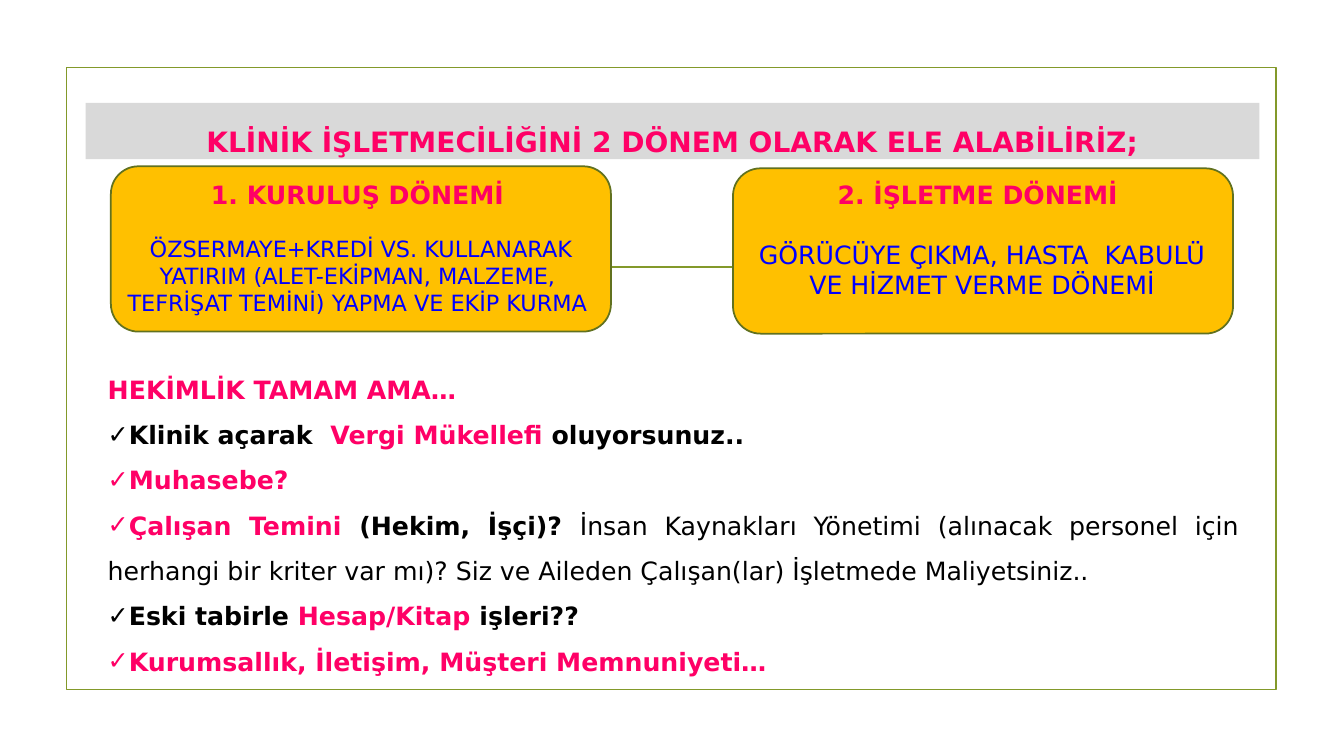
from dataclasses import dataclass
from lxml.etree import SubElement
from pptx import Presentation
from pptx.dml.color import RGBColor
from pptx.enum.shapes import MSO_CONNECTOR as Connector, MSO_SHAPE as Shape
from pptx.enum.text import MSO_ANCHOR as Anchor, PP_ALIGN as Align
from pptx.oxml.ns import qn
from pptx.util import Inches, Pt


@dataclass(frozen=True)
class Theme:
    font: str = "DejaVu Sans"
    pink: str = "FF0066"
    blue: str = "0000FF"
    black: str = "000000"
    band: str = "D9D9D9"
    card: str = "FFC000"
    card_edge: str = "61711F"
    olive: str = "83992A"
    line: float = 1.25
    title: int = 20
    body: int = 18
    small: int = 16


THEME = Theme()
PINK = (THEME.pink, True)
BLACK = (THEME.black, True)
PLAIN = (THEME.black, False)
BLUE = (THEME.blue, False)

TITLE = "KLİNİK İŞLETMECİLİĞİNİ 2 DÖNEM OLARAK ELE ALABİLİRİZ;"
# card position, text area, heading, description, description size
PERIODS = [
    ((1.1, 1.65), (0.97, 1.73, 5.15, 1.48), "1. KURULUŞ DÖNEMİ",
     " ÖZSERMAYE+KREDİ VS. KULLANARAK YATIRIM (ALET-EKİPMAN, MALZEME, "
     "TEFRİŞAT TEMİNİ) YAPMA VE EKİP KURMA", THEME.small),
    ((7.27, 1.67), (7.33, 1.73, 4.82, 1.31), "2. İŞLETME DÖNEMİ ",
     "GÖRÜCÜYE ÇIKMA, HASTA  KABULÜ VE HİZMET VERME DÖNEMİ", THEME.body),
]
LEAD = "HEKİMLİK TAMAM AMA…"
CHECKS = [
    [("Klinik açarak  ", BLACK), ("Vergi Mükellefi", PINK), (" oluyorsunuz..", BLACK)],
    [("Muhasebe?", PINK)],
    [("Çalışan Temini ", PINK), ("(Hekim, İşçi)? ", BLACK),
     ("İnsan Kaynakları Yönetimi (alınacak personel için herhangi bir kriter "
      "var mı)? Siz ve Aileden Çalışan(lar) İşletmede Maliyetsiniz..", PLAIN)],
    [("Eski tabirle ", BLACK), ("Hesap/Kitap ", PINK), ("işleri??", BLACK)],
    [("Kurumsallık, İletişim, Müşteri Memnuniyeti…", PINK)],
]

WIDTH, HEIGHT = 13.33, 7.5
FRAME = (0.66, 0.67, 12, 6.17)
BAND = (0.85, 1.02, 11.64, 0.56)
CARD_SIZE = (4.96, 1.64)
LINK = (1.53, 2.65, 11.81, 2.65)
LIST = (0.97, 3.51, 11.42, 3.28)
LINE_HEIGHT = 1.164  # natural line height of the font, in ems


def inches(values):
    return [Inches(value) for value in values]


def add_panel(page, kind, area, fill=None, edge=None):
    panel = page.shapes.add_shape(kind, *inches(area))
    panel.shadow.inherit = False
    if fill:
        panel.fill.solid()
        panel.fill.fore_color.rgb = RGBColor.from_string(fill)
    else:
        panel.fill.background()
    if edge:
        panel.line.color.rgb = RGBColor.from_string(edge)
        panel.line.width = Pt(THEME.line)
    else:
        panel.line.fill.background()
    return panel


def add_link(page):
    link = page.shapes.add_connector(Connector.STRAIGHT, *inches(LINK))
    link.line.color.rgb = RGBColor.from_string(THEME.olive)
    link.line.width = Pt(THEME.line)
    SubElement(link._element.spPr, qn("a:effectLst"))


def add_text(page, area):
    box = page.shapes.add_textbox(*inches(area))
    box.text_frame.word_wrap = True
    return box.text_frame


def add_check(para):
    """Put a check mark directly in front of the paragraph's text."""
    props = para._p.get_or_add_pPr()
    props.set("marL", "0")
    props.set("indent", "0")
    SubElement(props, qn("a:buFont"), typeface=THEME.font)
    SubElement(props, qn("a:buChar"), char="✓")


def write(para, spans, size, align, spacing=None):
    para.alignment = align
    if spacing:
        para.line_spacing = spacing
    for text, (color, bold) in spans:
        span = para.add_run()
        span.text = text
        span.font.name = THEME.font
        span.font.size = Pt(size)
        span.font.bold = bold
        span.font.color.rgb = RGBColor.from_string(color)


def add_title(page):
    frame = add_panel(page, Shape.RECTANGLE, BAND, fill=THEME.band).text_frame
    frame.word_wrap = True
    frame.vertical_anchor = Anchor.TOP
    write(frame.paragraphs[0], [(TITLE, PINK)], THEME.title, Align.CENTER, 1.5)


def add_period(page, corner, area, heading, description, size):
    add_panel(page, Shape.ROUNDED_RECTANGLE, corner + CARD_SIZE,
              THEME.card, THEME.card_edge)
    frame = add_text(page, area)
    write(frame.paragraphs[0], [(heading, PINK)], THEME.body, Align.CENTER)
    para = frame.add_paragraph()
    para.space_before = Pt(round(size * LINE_HEIGHT, 1))
    write(para, [(description, BLUE)], size, Align.CENTER)


def add_checklist(page):
    frame = add_text(page, LIST)
    write(frame.paragraphs[0], [(LEAD, PINK)], THEME.body, Align.JUSTIFY, 1.5)
    for spans in CHECKS:
        para = frame.add_paragraph()
        add_check(para)
        write(para, spans, THEME.body, Align.JUSTIFY, 1.5)


def main():
    deck = Presentation()
    deck.slide_width, deck.slide_height = inches((WIDTH, HEIGHT))
    page = deck.slides.add_slide(deck.slide_layouts[6])
    add_panel(page, Shape.RECTANGLE, FRAME, edge=THEME.olive)
    add_link(page)
    add_title(page)
    for period in PERIODS:
        add_period(page, *period)
    add_checklist(page)
    deck.save("out.pptx")


if __name__ == "__main__":
    main()
